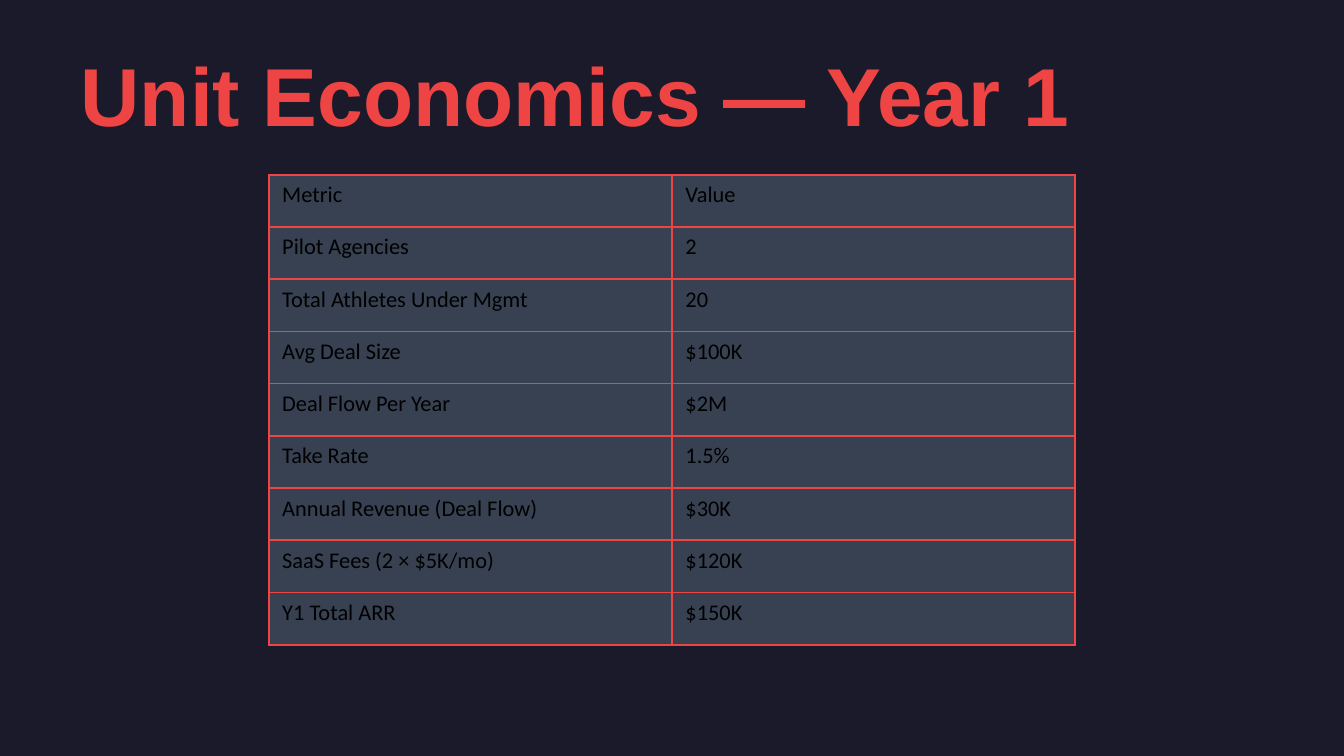
from lxml import etree
from pptx import Presentation
from pptx.dml.color import RGBColor
from pptx.enum import text
from pptx.oxml import ns
from pptx.util import Inches, Pt

RED = "EF4444"
ROWS = [
    ("Metric", "Value"),
    ("Pilot Agencies", "2"),
    ("Total Athletes Under Mgmt", "20"),
    ("Avg Deal Size", "$100K"),
    ("Deal Flow Per Year", "$2M"),
    ("Take Rate", "1.5%"),
    ("Annual Revenue (Deal Flow)", "$30K"),
    ("SaaS Fees (2 × $5K/mo)", "$120K"),
    ("Y1 Total ARR", "$150K"),
]


def paint(fill, color):
    fill.solid()
    fill.fore_color.rgb = RGBColor.from_string(color)


def style(para, name, size, color, bold=False):
    for run in para.runs:
        run.font.name = name
        run.font.size = Pt(size)
        run.font.bold = bold
        run.font.color.rgb = RGBColor.from_string(color)


def add_title(slide, words):
    title = slide.shapes.title
    title.left, title.top = Inches(0.5), Inches(0.4)
    title.width, title.height = Inches(9), Inches(0.6)
    frame = title.text_frame
    frame.text = words
    frame.word_wrap = True
    frame.auto_size = text.MSO_AUTO_SIZE.NONE
    frame.vertical_anchor = text.MSO_ANCHOR.MIDDLE
    para = frame.paragraphs[0]
    para.alignment = text.PP_ALIGN.LEFT
    style(para, "Arial", 44, RED, True)


def add_border(cell, color, width):
    props = cell._tc.get_or_add_tcPr()
    for side in ("lnL", "lnR", "lnT", "lnB"):
        line = etree.SubElement(props, ns.qn(f"a:{side}"), w=str(Pt(width)))
        fill = etree.SubElement(line, ns.qn("a:solidFill"))
        etree.SubElement(fill, ns.qn("a:srgbClr"), val=color)


def add_grid(slide, rows):
    table = slide.shapes.add_table(
        len(rows), len(rows[0]), Inches(2), Inches(1.3), Inches(6), Inches(3.5)
    ).table
    for r, row in enumerate(rows):
        for c, words in enumerate(row):
            cell = table.cell(r, c)
            cell.text_frame.text = words
            style(cell.text_frame.paragraphs[0], "Calibri", 12, "000000")
            add_border(cell, RED, 1)
            paint(cell.fill, "374151")


def main():
    deck = Presentation()
    deck.slide_width = Inches(10)
    deck.slide_height = Inches(10 * 9 / 16)
    slide = deck.slides.add_slide(deck.slide_layouts[5])
    paint(slide.background.fill, "1A1A2A")
    add_title(slide, "Unit Economics — Year 1")
    add_grid(slide, ROWS)
    deck.save("out.pptx")


if __name__ == "__main__":
    main()
